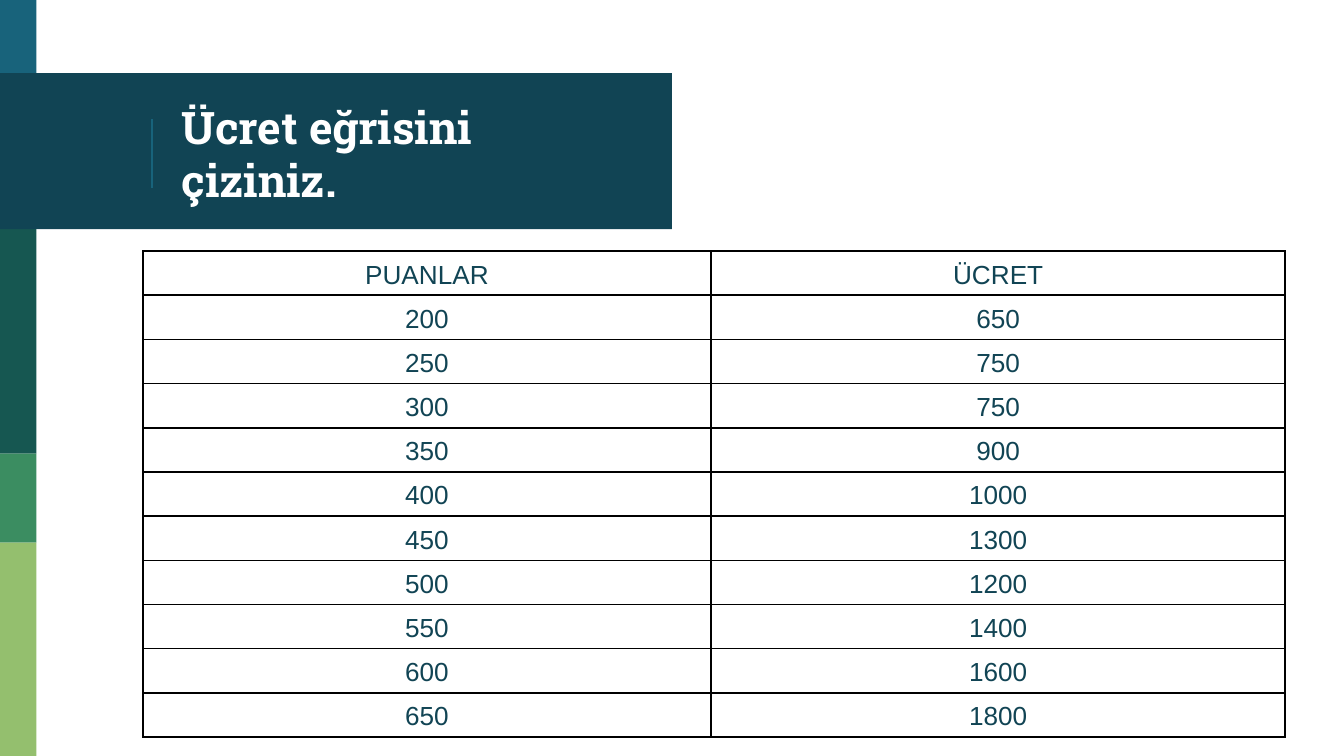
from lxml.etree import SubElement
from pptx import Presentation
from pptx.dml.color import RGBColor
from pptx.enum.shapes import MSO_CONNECTOR, MSO_SHAPE
from pptx.enum.text import MSO_ANCHOR, PP_ALIGN
from pptx.oxml import parse_xml
from pptx.oxml.ns import nsdecls, qn
from pptx.util import Pt

WHITE = RGBColor(0xFF, 0xFF, 0xFF)
BLACK = RGBColor(0x00, 0x00, 0x00)
NAVY = RGBColor(0x11, 0x44, 0x54)
BLUE = RGBColor(0x18, 0x63, 0x7B)
PINE = RGBColor(0x16, 0x57, 0x51)
GREEN = RGBColor(0x3B, 0x8D, 0x61)
LIME = RGBColor(0x94, 0xBF, 0x6E)

SLIDE_WIDTH, SLIDE_HEIGHT = 720, 405

WAGES = [
    ("PUANLAR", "ÜCRET"),
    (200, 650),
    (250, 750),
    (300, 750),
    (350, 900),
    (400, 1000),
    (450, 1300),
    (500, 1200),
    (550, 1400),
    (600, 1600),
    (650, 1800),
]


def write_text(frame, text, font="Arial", size=14, color=NAVY, bold=False,
               align=PP_ALIGN.LEFT):
    paragraph = frame.paragraphs[0]
    paragraph.alignment = align
    run = paragraph.add_run()
    run.text = text
    run.font.name = font
    run.font.size = Pt(size)
    run.font.bold = bold
    run.font.color.rgb = color


def add_block(slide, left, top, width, height, color):
    shape = slide.shapes.add_shape(
        MSO_SHAPE.RECTANGLE, Pt(left), Pt(top), Pt(width), Pt(height))
    shape.shadow.inherit = False
    shape.fill.solid()
    shape.fill.fore_color.rgb = color
    shape.line.fill.background()


def add_side_bar(slide, left, top, width, height):
    """Stack colour bands; each one starts at a given offset and ends at the next."""
    bands = [(0, BLUE), (122.4, PINE), (243, GREEN), (290.75, LIME)]
    ends = [start for start, _ in bands[1:]] + [height]
    for (start, color), end in zip(bands, ends):
        add_block(slide, left, top + start, width, end - start, color)


def add_title_banner(slide, left, top, width, height):
    add_block(slide, left, top, width, height, NAVY)

    # Thin rule beside the title
    rule_left = Pt(left + 81.5)
    rule = slide.shapes.add_connector(
        MSO_CONNECTOR.STRAIGHT, rule_left, Pt(top + 24.5), rule_left, Pt(top + 61.5))
    rule.line.color.rgb = BLUE
    rule.line.width = Pt(0.75)
    SubElement(rule.element.spPr, qn("a:effectLst"))

    # Title, raised above the banner
    title = slide.shapes.title
    title.left, title.top = Pt(left + 90), Pt(top + 2.5)
    title.width, title.height = Pt(253), Pt(80.5)
    frame = title.text_frame
    frame.word_wrap = True
    frame.vertical_anchor = MSO_ANCHOR.MIDDLE
    frame.margin_left = frame.margin_right = Pt(7.2)
    frame.margin_top = frame.margin_bottom = Pt(7.2)
    write_text(frame, "Ücret eğrisini çiziniz.", font="Roboto Slab", size=24,
               color=WHITE, bold=True)
    title.element.getparent().append(title.element)


def add_borders(cell, color, width):
    properties = cell._tc.get_or_add_tcPr()
    for index, side in enumerate(("lnL", "lnR", "lnT", "lnB")):
        properties.insert(index, parse_xml(
            f'<a:{side} {nsdecls("a")} w="{Pt(width)}"><a:solidFill>'
            f'<a:srgbClr val="{color}"/></a:solidFill></a:{side}>'))


def add_wage_table(slide, left, top, width, height):
    table = slide.shapes.add_table(
        len(WAGES), 2, Pt(left), Pt(top), Pt(width), Pt(height)).table
    table.first_row = table.horz_banding = False
    table.columns[0].width = Pt(304.5)
    table.columns[1].width = Pt(width - 304.5)
    for row, values in zip(table.rows, WAGES):
        row.height = Pt(height / len(WAGES))
        for cell, value in zip(row.cells, values):
            cell.fill.background()
            cell.vertical_anchor = MSO_ANCHOR.BOTTOM
            cell.margin_left = cell.margin_right = Pt(7.2)
            cell.margin_top = cell.margin_bottom = Pt(3)
            write_text(cell.text_frame, str(value), align=PP_ALIGN.CENTER)
            add_borders(cell, BLACK, 1)


def main():
    presentation = Presentation()
    presentation.slide_width = Pt(SLIDE_WIDTH)
    presentation.slide_height = Pt(SLIDE_HEIGHT)
    slide = presentation.slides.add_slide(presentation.slide_layouts[5])
    slide.background.fill.solid()
    slide.background.fill.fore_color.rgb = WHITE

    add_side_bar(slide, 0, 0, 19.5, SLIDE_HEIGHT)
    add_title_banner(slide, 0, 39.25, 360, 83.5)
    add_wage_table(slide, 76.5, 134.5, 612, 260.5)
    presentation.save("out.pptx")


if __name__ == "__main__":
    main()
